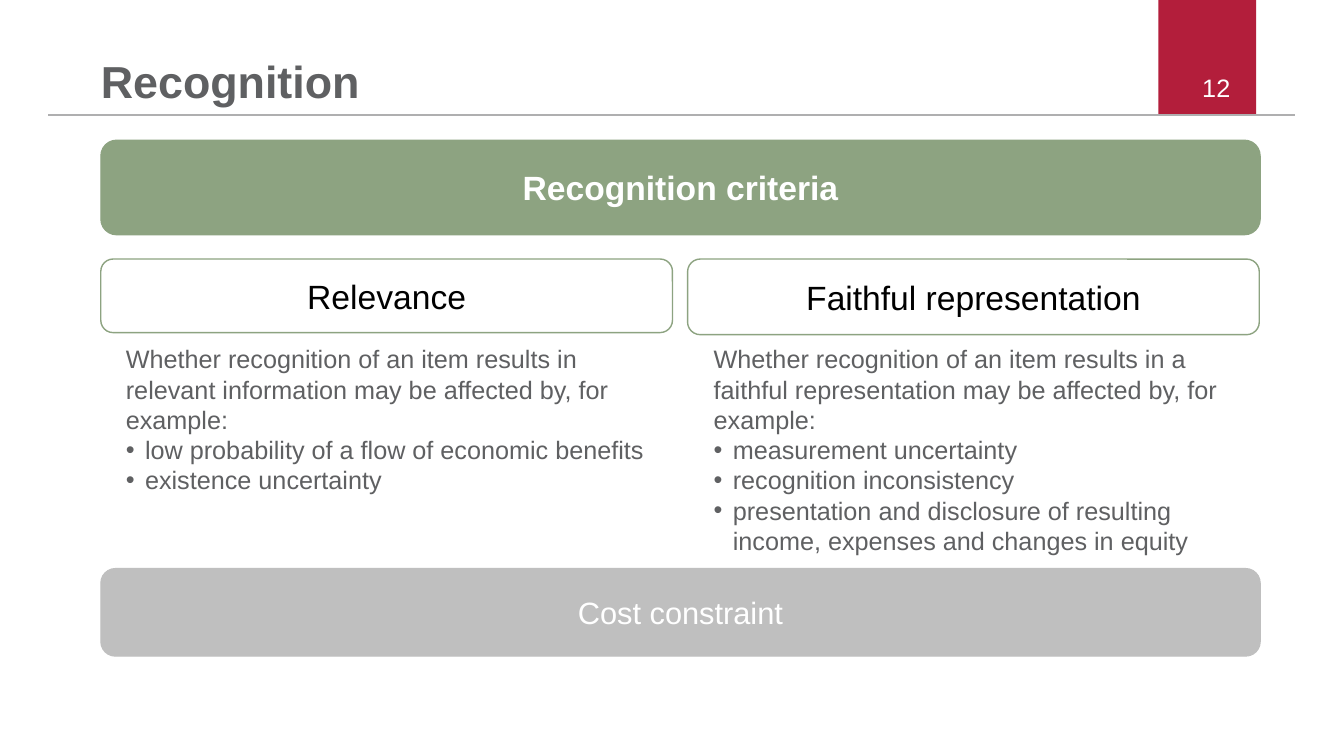
from lxml.etree import SubElement
from pptx import Presentation
from pptx.dml.color import RGBColor
from pptx.enum.shapes import MSO_CONNECTOR, MSO_SHAPE
from pptx.enum.text import MSO_ANCHOR, PP_ALIGN
from pptx.oxml.ns import qn
from pptx.util import Pt

PX = 9144
COLORS = {
    "red": "B31E3B",
    "rule": "AFAFB0",
    "green": "8DA381",
    "silver": "BFBFBF",
    "text": "5F6062",
    "black": "000000",
    "white": "FFFFFF",
}


def color(name):
    return RGBColor.from_string(COLORS[name])


def write(frame, lines, size, ink, align=PP_ALIGN.LEFT, bold=False, bullets=False):
    frame.word_wrap = True
    for index, line in enumerate(lines):
        para = frame.add_paragraph() if index else frame.paragraphs[0]
        para.text = line
        para.alignment = align
        if bullets and index:
            properties = para._p.get_or_add_pPr()
            properties.set("marL", str(19 * PX))
            properties.set("indent", str(-19 * PX))
            SubElement(properties, qn("a:buFont")).set("typeface", "Arial")
            SubElement(properties, qn("a:buChar")).set("char", "•")
        para.font.name = "Arial"
        para.font.size = Pt(size)
        para.font.bold = bold
        para.font.color.rgb = color(ink)


deck = Presentation()
deck.slide_width = 1333 * PX
deck.slide_height = 750 * PX
page = deck.slides.add_slide(deck.slide_layouts[6])

tab = page.shapes.add_shape(MSO_SHAPE.RECTANGLE, 1149 * PX, 0, 97 * PX, 114 * PX)
tab.shadow.inherit = False
tab.fill.solid()
tab.fill.fore_color.rgb = color("red")
tab.line.fill.background()

rule = page.shapes.add_connector(
    MSO_CONNECTOR.STRAIGHT, 48 * PX, 114 * PX, 1284 * PX, 114 * PX
)
rule.line.color.rgb = color("rule")
rule.line.width = Pt(1.2)
SubElement(rule._element.spPr, qn("a:effectLst"))

number = page.shapes.add_textbox(919 * PX, 67 * PX, 311 * PX, 40 * PX)
number.text_frame.vertical_anchor = MSO_ANCHOR.MIDDLE
write(number.text_frame, ["12"], 18, "white", PP_ALIGN.RIGHT)

title = page.shapes.add_textbox(100 * PX, 0, 988 * PX, 107 * PX)
frame = title.text_frame
frame.margin_left = frame.margin_top = frame.margin_right = frame.margin_bottom = 0
frame.vertical_anchor = MSO_ANCHOR.BOTTOM
frame.paragraphs[0].line_spacing = 0.9
write(frame, ["Recognition"], 32, "text", bold=True)

panels = [
    ("Recognition criteria", 100, 139, 1150, 94, "green", "green", 0.75, 24, "white", True),
    ("Relevance", 100, 257, 567, 73, None, "green", 1, 24, "black", False),
    ("Faithful representation", 682, 257, 567, 75, None, "green", 1, 24, "black", False),
    ("Cost constraint", 100, 564, 1150, 87, "silver", "silver", 0.75, 22, "white", False),
]
for label, left, top, width, height, fill, edge, weight, size, ink, bold in panels:
    panel = page.shapes.add_shape(
        MSO_SHAPE.ROUNDED_RECTANGLE, left * PX, top * PX, width * PX, height * PX
    )
    panel.shadow.inherit = False
    if fill:
        panel.fill.solid()
        panel.fill.fore_color.rgb = color(fill)
    else:
        panel.fill.background()
    panel.line.color.rgb = color(edge)
    panel.line.width = Pt(weight)
    panel.text_frame.vertical_anchor = MSO_ANCHOR.MIDDLE
    write(panel.text_frame, [label], size, ink, PP_ALIGN.CENTER, bold)

explanations = [
    (115, 162, [
        "Whether recognition of an item results in relevant information may be affected by, for example:",
        "low probability of a flow of economic benefits",
        "existence uncertainty",
    ]),
    (698, 222, [
        "Whether recognition of an item results in a faithful representation may be affected by, for example:",
        "measurement uncertainty",
        "recognition inconsistency",
        "presentation and disclosure of resulting income, expenses and changes in equity",
    ]),
]
for left, height, lines in explanations:
    box = page.shapes.add_textbox(left * PX, 336 * PX, 559 * PX, height * PX)
    write(box.text_frame, lines, 18, "text", bullets=True)

deck.save("out.pptx")
